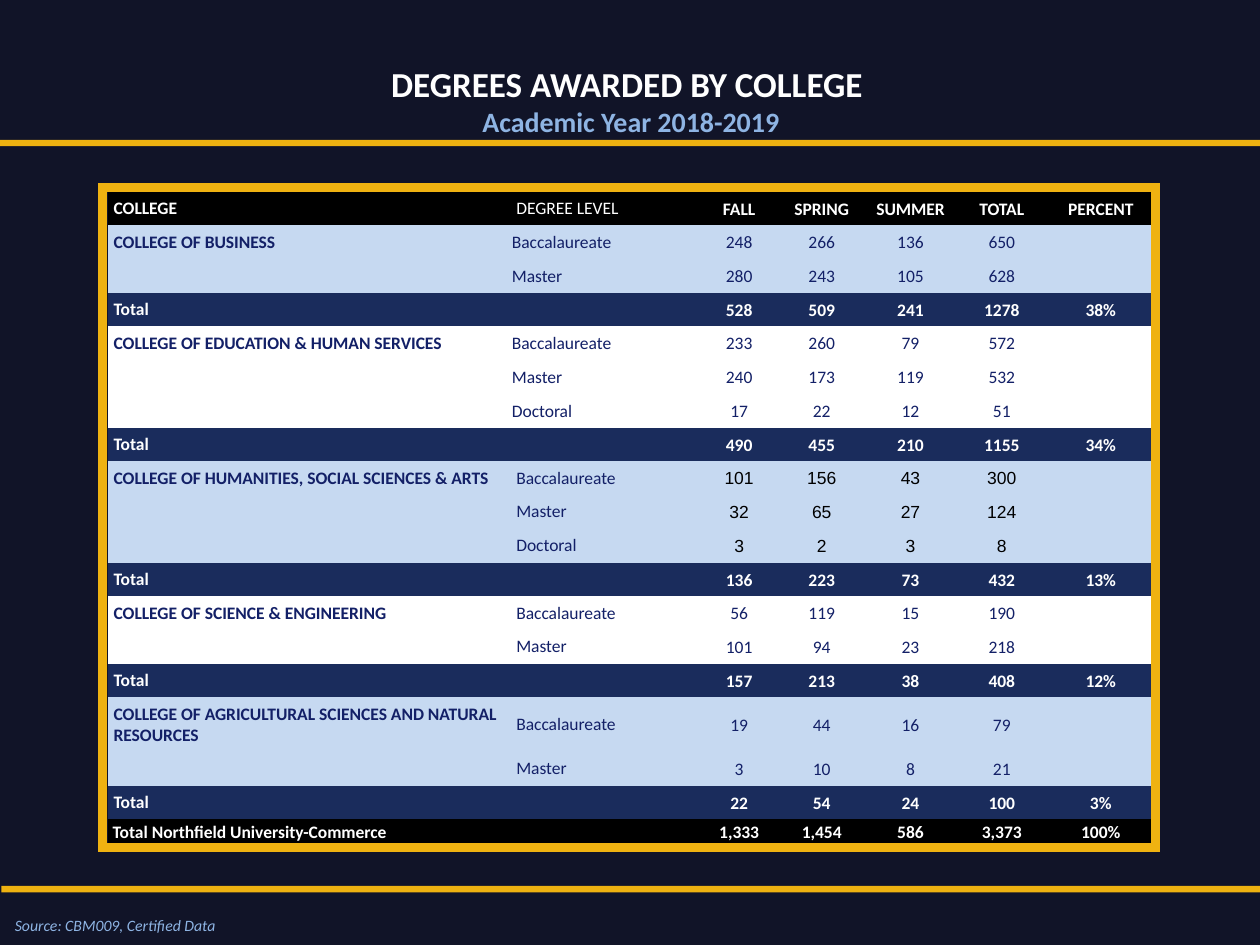
from lxml.etree import SubElement
from pptx import Presentation
from pptx.dml.color import RGBColor
from pptx.enum.shapes import MSO_SHAPE
from pptx.enum.text import MSO_ANCHOR, MSO_AUTO_SIZE, PP_ALIGN
from pptx.oxml.ns import qn
from pptx.util import Cm, Pt

COLORS = {
    "back": "111428", "gold": "EFB211", "bar": "EEB211", "sky": "8EB4E3",
    "white": "FFFFFF", "black": "000000", "ink": "132067",
    "pale": "C6D9F1", "navy": "1A2C5C",
}
NO_STYLE = "{2D5ABB26-0587-4C30-8999-92F81FD0307C}"
COL_WIDTHS = [8.12, 3.86, 1.5, 1.83, 1.75, 1.93, 2.06]
ROW_HEIGHT, TALL_ROW, LAST_ROW = 0.68, 1.1, 0.5
# Cell insets: sides, top, bottom
WIDE, TIGHT, LAST_LABEL = (0.12, 0.12, 0.12), (0.03, 0.03, 0), (0.1, 0.03, 0)

HEADER = ["COLLEGE", "DEGREE LEVEL", "FALL", "SPRING", "SUMMER", "TOTAL", "PERCENT"]
# College, degree rows, totals
COLLEGES = [
    ("COLLEGE OF BUSINESS",
     [("Baccalaureate", 248, 266, 136, 650), ("Master", 280, 243, 105, 628)],
     (528, 509, 241, 1278, "38%")),
    ("COLLEGE OF EDUCATION & HUMAN SERVICES",
     [("Baccalaureate", 233, 260, 79, 572), ("Master", 240, 173, 119, 532),
      ("Doctoral", 17, 22, 12, 51)],
     (490, 455, 210, 1155, "34%")),
    ("COLLEGE OF HUMANITIES, SOCIAL SCIENCES & ARTS",
     [("Baccalaureate", 101, 156, 43, 300), ("Master", 32, 65, 27, 124),
      ("Doctoral", 3, 2, 3, 8)],
     (136, 223, 73, 432, "13%")),
    ("COLLEGE OF SCIENCE & ENGINEERING",
     [("Baccalaureate", 56, 119, 15, 190), ("Master", 101, 94, 23, 218)],
     (157, 213, 38, 408, "12%")),
    ("COLLEGE OF AGRICULTURAL SCIENCES AND NATURAL RESOURCES",
     [("Baccalaureate", 19, 44, 16, 79), ("Master", 3, 10, 8, 21)],
     (22, 54, 24, 100, "3%")),
]
GRAND_TOTAL = ["Total Northfield University-Commerce", "",
               "1,333", "1,454", "586", "3,373", "100%"]


def rgb(name):
    return RGBColor.from_string(COLORS[name])


class Deck:
    font = "Calibri"

    def __init__(self, prs):
        self.s = prs.slides.add_slide(prs.slide_layouts[5])
        self.s.background.fill.solid()
        self.s.background.fill.fore_color.rgb = rgb("back")

    def style(self, p, size, color, bold=False, italic=False, font=None, align=PP_ALIGN.LEFT):
        p.alignment = align
        for r in p.runs:
            f = r.font
            f.name, f.size, f.bold, f.italic = font or self.font, Pt(size), bold, italic
            f.color.rgb = rgb(color)

    def title(self, x, y, w, h, lines):
        sp = self.s.shapes.title
        sp.left, sp.top, sp.width, sp.height = Cm(x), Cm(y), Cm(w), Cm(h)
        tf = sp.text_frame
        tf.text = "\n".join(text for text, _, _ in lines)
        tf.vertical_anchor, tf.auto_size = MSO_ANCHOR.TOP, MSO_AUTO_SIZE.NONE
        for p, (_, size, color) in zip(tf.paragraphs, lines):
            self.style(p, size, color, bold=True, align=PP_ALIGN.CENTER)

    def note(self, x, y, w, h, text):
        tf = self.s.shapes.add_textbox(Cm(x), Cm(y), Cm(w), Cm(h)).text_frame
        tf.word_wrap = True
        tf.text = text
        self.style(tf.paragraphs[0], 9, "sky", italic=True)

    def rect(self, x, y, w, h, fill=None, line=None, width=0):
        sp = self.s.shapes.add_shape(MSO_SHAPE.RECTANGLE, Cm(x), Cm(y), Cm(w), Cm(h))
        sp.shadow.inherit = False
        if fill:
            sp.fill.solid()
            sp.fill.fore_color.rgb = rgb(fill)
        else:
            sp.fill.background()
        if line:
            sp.line.color.rgb = rgb(line)
            sp.line.width = Pt(width)
            # Square corners
            SubElement(sp._element.spPr.find(qn("a:ln")), qn("a:miter"), lim="800000")
        else:
            sp.line.fill.background()

    def table(self, x, y, heights):
        frame = self.s.shapes.add_table(len(heights), len(COL_WIDTHS), Cm(x), Cm(y),
                                        Cm(sum(COL_WIDTHS)), Cm(sum(heights)))
        tbl = frame.table
        tbl.horz_banding = tbl.first_row = False
        frame._element.find(".//" + qn("a:tableStyleId")).text = NO_STYLE
        for col, w in zip(tbl.columns, COL_WIDTHS):
            col.width = Cm(w)
        for row, h in zip(tbl.rows, heights):
            row.height = Cm(h)
        return tbl

    def cell(self, cell, text, fill, inset=TIGHT, **look):
        side, top, bottom = inset
        cell.margin_left = cell.margin_right = Cm(side)
        cell.margin_top, cell.margin_bottom = Cm(top), Cm(bottom)
        cell.vertical_anchor = MSO_ANCHOR.MIDDLE
        cell.fill.solid()
        cell.fill.fore_color.rgb = rgb(fill)
        p = cell.text_frame.paragraphs[0]
        if text == "":
            SubElement(p._p, qn("a:endParaRPr"), sz="1000")
            return
        p.text = str(text)
        self.style(p, 10, **look)

    def row(self, cells, values, fill, color, bold,
            label_inset=WIDE, level_inset=WIDE, number=None):
        """One table row: college, degree level, then centred figures."""
        self.cell(cells[0], values[0], fill, label_inset, color=color, bold=True)
        self.cell(cells[1], values[1], fill, level_inset, color=color)
        look = {"color": color, "bold": bold, "align": PP_ALIGN.CENTER, **(number or {})}
        for cell, value in zip(cells[2:], values[2:]):
            self.cell(cell, value, fill, **look)

    def top_border(self, cell, color, width):
        tc_pr = cell._tc.get_or_add_tcPr()
        ln = tc_pr.makeelement(qn("a:lnT"), {"w": str(Pt(width))})
        SubElement(SubElement(ln, qn("a:solidFill")), qn("a:srgbClr"), val=COLORS[color])
        tc_pr.insert(0, ln)


def fill_table(deck):
    # Row heights: only the two-line college name and the last row differ
    heights = [ROW_HEIGHT]
    for name, degrees, _ in COLLEGES:
        heights.append(TALL_ROW if len(name) > 50 else ROW_HEIGHT)
        heights += [ROW_HEIGHT] * len(degrees)
    heights.append(LAST_ROW)
    tbl = deck.table(2.17, 3.86, heights)
    rows = iter([list(row.cells) for row in tbl.rows])

    # Header
    header = next(rows)
    deck.row(header, HEADER, "black", "white", True)
    for cell in header:
        deck.top_border(cell, "sky", 0.75)

    # Colleges, alternately pale and white, each closed by a total
    for i, (name, degrees, totals) in enumerate(COLLEGES):
        number = {"font": "Arial", "color": "black"} if i == 2 else None
        for j, degree in enumerate(degrees):
            deck.row(next(rows), ["" if j else name, *degree, ""],
                     "white" if i % 2 else "pale", "ink", False,
                     level_inset=TIGHT if i < 2 else WIDE, number=number)
        deck.row(next(rows), ["Total", "", *totals], "navy", "white", True)

    # Grand total
    deck.row(next(rows), GRAND_TOTAL, "black", "white", True,
             label_inset=LAST_LABEL, level_inset=TIGHT)


def main():
    prs = Presentation()
    prs.slide_width, prs.slide_height = Cm(25.4), Cm(19.05)
    deck = Deck(prs)

    # Table and its frame
    fill_table(deck)
    deck.rect(2.07, 3.78, 21.23, 13.31, line="gold", width=5)

    # Title, source and the two bars
    deck.title(4.39, 1.14, 16.66, 2.57, [("DEGREES AWARDED BY COLLEGE ", 20, "white"),
                                         ("Academic Year 2018-2019", 16, "sky")])
    deck.note(0.05, 18.34, 4.8, 0.64, "Source: CBM009, Certified Data")
    deck.rect(0.03, 17.86, 25.4, 0.13, fill="bar")
    deck.rect(0, 2.82, 25.4, 0.13, fill="bar")

    prs.save("out.pptx")


if __name__ == "__main__":
    main()
